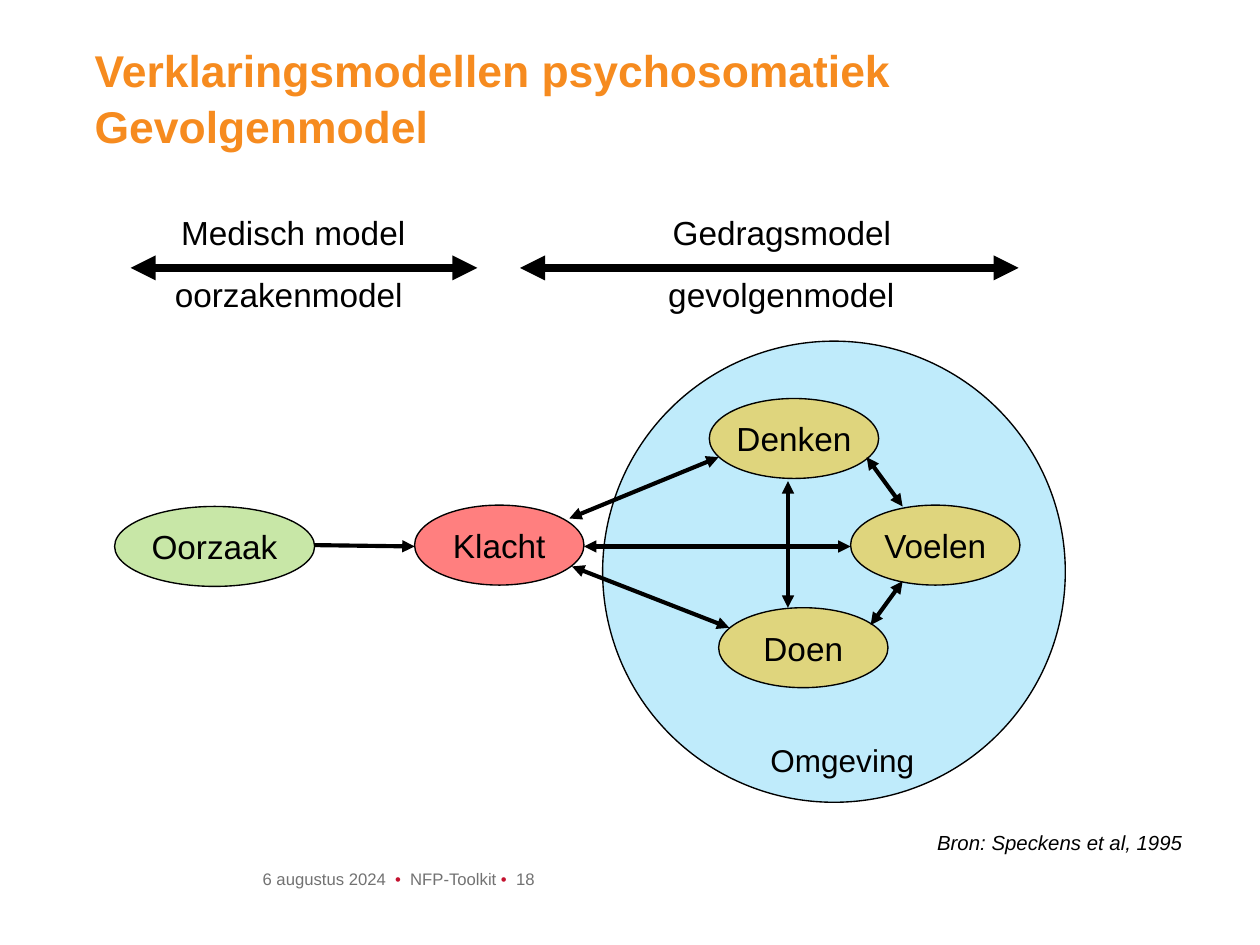
from lxml import etree
from pptx import Presentation
from pptx import util as u
from pptx.dml.color import RGBColor
from pptx.enum import shapes, text
from pptx.oxml import ns

BLACK = RGBColor(0, 0, 0)
ORANGE = RGBColor(0xF6, 0x8B, 0x1F)
GREY = RGBColor(0x72, 0x72, 0x72)
CRIMSON = RGBColor(0xC4, 0x12, 0x2F)
SKY = RGBColor(0x00, 0xB0, 0xF0)
RED = RGBColor(0xFF, 0, 0)
GREEN = RGBColor(0x92, 0xD0, 0x50)
GOLD = RGBColor(0xFF, 0xC0, 0)
COLS, ROWS = 94.5, 70.9
WIDE, HIGH = u.Inches(9.45), u.Inches(7.09)
LEFT, MID = text.PP_ALIGN.LEFT, text.PP_ALIGN.CENTER


class Deck:
    """Draws styled elements on one slide, placed by grid columns and rows."""

    def __init__(self):
        self.prs = Presentation()
        self.prs.slide_width, self.prs.slide_height = WIDE, HIGH
        self.page = self.prs.slides.add_slide(self.prs.slide_layouts[5])
        self.font = "Arial"

    def grid(self, *cells):
        units = (WIDE / COLS, HIGH / ROWS)
        return [round(cell * units[i % 2]) for i, cell in enumerate(cells)]

    def run(self, para, words, size, color=BLACK, bold=False, slant=False):
        run = para.add_run()
        run.text = words
        font = run.font
        font.name, font.size, font.color.rgb = self.font, u.Pt(size), color
        font.bold, font.italic = bold, slant

    def title(self, box, lines):
        shape = self.page.shapes.title
        shape.left, shape.top, shape.width, shape.height = self.grid(*box)
        frame = shape.text_frame
        frame.auto_size = text.MSO_AUTO_SIZE.NONE
        frame.vertical_anchor = text.MSO_ANCHOR.TOP
        self.inset(frame, 0)
        para = frame.paragraphs[0]
        para.alignment, para.line_spacing = LEFT, 1.04
        for i, line in enumerate(lines):
            if i:
                para.add_line_break()
            self.run(para, line, 24, ORANGE, bold=True)

    def inset(self, frame, low):
        frame.margin_left = frame.margin_right = frame.margin_top = 0
        frame.margin_bottom = u.Inches(low)

    def label(self, box, words, size=18, align=MID, wrap=True, slant=False):
        frame = self.page.shapes.add_textbox(*self.grid(*box)).text_frame
        frame.word_wrap = wrap
        frame.auto_size = text.MSO_AUTO_SIZE.SHAPE_TO_FIT_TEXT
        para = frame.paragraphs[0]
        para.alignment = align
        self.run(para, words, size, slant=slant)

    def foot(self, box, parts):
        frame = self.page.shapes.add_textbox(*self.grid(*box)).text_frame
        frame.word_wrap = True
        frame.vertical_anchor = text.MSO_ANCHOR.BOTTOM
        self.inset(frame, 0.05)
        for words, color in parts:
            self.run(frame.paragraphs[0], words, 9, color)

    def oval(self, box, color, share, words=""):
        shape = self.page.shapes.add_shape(shapes.MSO_SHAPE.OVAL, *self.grid(*box))
        shape.shadow.inherit = False
        shape.fill.solid()
        shape.fill.fore_color.rgb = color
        tint = shape.fill._xPr.find(".//" + ns.qn("a:srgbClr"))
        etree.SubElement(tint, ns.qn("a:alpha"), val=str(share * 1000))
        shape.line.color.rgb, shape.line.width = BLACK, u.Pt(0.75)
        if words:
            frame = shape.text_frame
            frame.word_wrap = False
            frame.vertical_anchor = text.MSO_ANCHOR.MIDDLE
            frame.paragraphs[0].alignment = MID
            self.run(frame.paragraphs[0], words, 18)

    def arrow(self, ends, width=2.25, tips=("headEnd", "tailEnd")):
        line = self.page.shapes.add_connector(
            shapes.MSO_CONNECTOR.STRAIGHT, *self.grid(*ends))
        line.line.color.rgb, line.line.width = BLACK, u.Pt(width)
        for tip in tips:
            etree.SubElement(line.line._ln, ns.qn("a:" + tip), type="triangle")
        etree.SubElement(line._element.spPr, ns.qn("a:effectLst"))


def main():
    deck = Deck()
    deck.title((7.1, 3.1, 80.3, 9.8),
               ("Verklaringsmodellen psychosomatiek", "Gevolgenmodel"))
    deck.foot((19.7, 64.6, 67.7, 2.6), (
        ("6 augustus 2024  ", GREY), ("• ", CRIMSON),
        (" NFP-Toolkit ", GREY), ("•  ", CRIMSON), ("18", GREY)))

    deck.oval((45.2, 25.6, 34.7, 34.6), SKY, 25)
    deck.label((56.8, 55.1, 12.9, 3.9), "Omgeving", 17, LEFT, wrap=False)

    for words, left, top, width in (
            ("Medisch model", 9.8, 15.4, 24.4),
            ("oorzakenmodel", 11.4, 20.1, 20.5),
            ("Gedragsmodel", 37.8, 15.4, 41.7),
            ("gevolgenmodel", 47.6, 20.1, 22)):
        deck.label((left, top, width, 4), words)
    for start, end in ((9.8, 35.8), (39, 76.4)):
        deck.arrow((start, 20.1, end, 20.1), 4.5)

    for words, left, top, width, color in (
            ("Oorzaak", 8.6, 38, 15, GREEN),
            ("Klacht", 31.1, 37.9, 12.7, RED),
            ("Doen", 53.9, 45.6, 12.7, GOLD),
            ("Voelen", 63.8, 37.9, 12.7, GOLD),
            ("Denken", 53.2, 29.9, 12.7, GOLD)):
        deck.oval((left, top, width, 6), color, 50, words)

    deck.arrow((23.6, 40.9, 31.1, 41), tips=("tailEnd",))
    for ends in ((53.9, 34.3, 42.7, 38.9), (43.8, 41, 63.8, 41),
                 (42.9, 42.5, 54.7, 47.1), (67.7, 43.6, 65.3, 46.9),
                 (65, 34.3, 67.7, 38), (59.1, 36.1, 59.1, 45.6)):
        deck.arrow(ends)

    deck.label((69.3, 61.8, 20.5, 2.9), "Bron: Speckens et al, 1995", 11,
               LEFT, wrap=False, slant=True)
    deck.prs.save("out.pptx")


if __name__ == "__main__":
    main()
